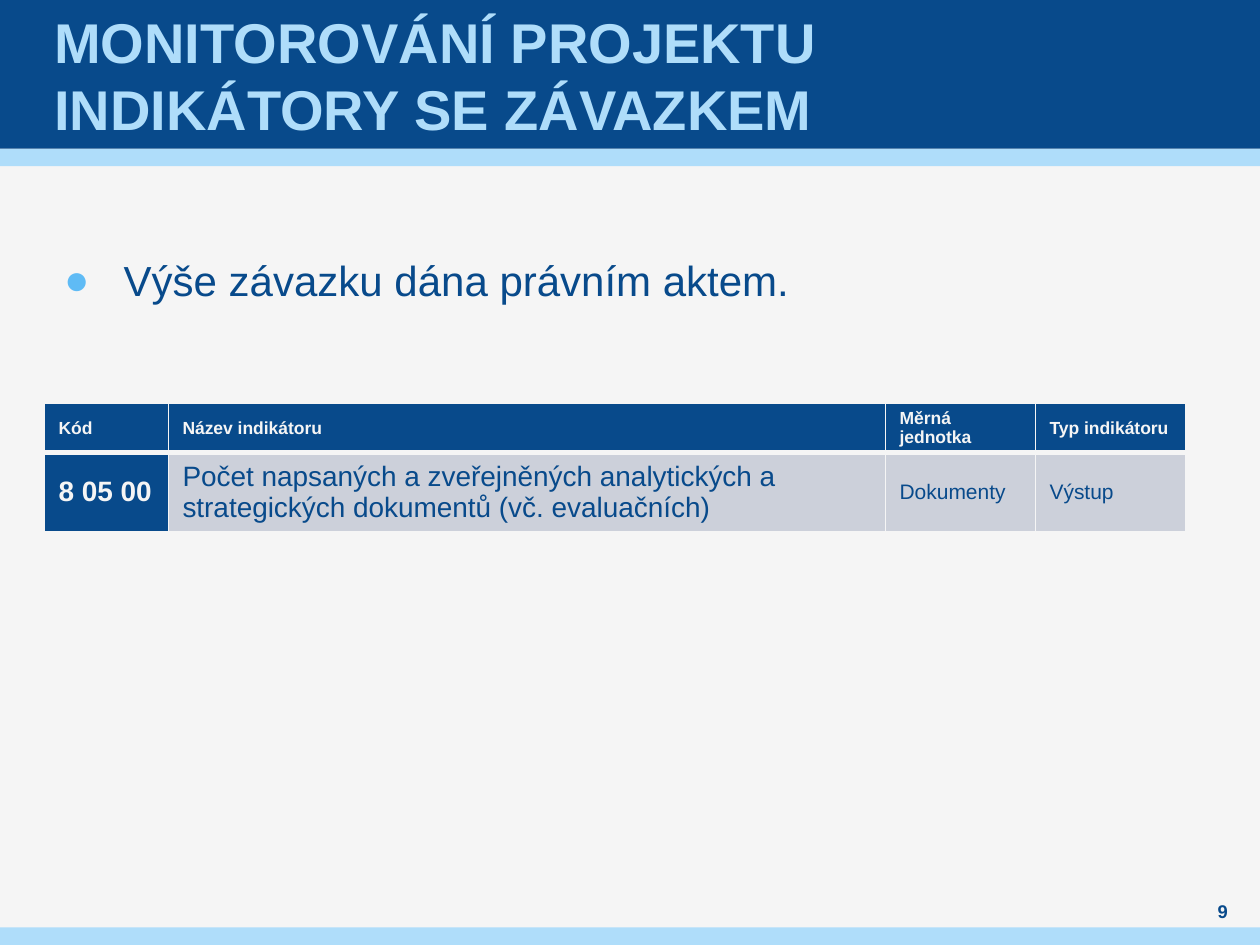
"""Builds the slide on project monitoring and its committed indicators."""
from dataclasses import dataclass

from lxml.etree import SubElement
from pptx import Presentation
from pptx.dml.color import RGBColor as Rgb
from pptx.enum.shapes import MSO_SHAPE as Preset
from pptx.enum.text import MSO_ANCHOR as Anchor, PP_ALIGN as Align
from pptx.oxml.ns import qn
from pptx.util import Pt


@dataclass(frozen=True)
class Theme:
    font: str = "Arial"
    navy: str = "084A8B"
    sky: str = "AFDDFA"
    bullet: str = "5FBBF5"
    paper: str = "F5F5F5"
    cell: str = "CCD0DA"
    title_size: float = 32
    body_size: float = 24
    name_size: float = 16
    detail_size: float = 12
    header_size: float = 10
    number_size: float = 10.5
    leading: float = 1.2


THEME = Theme()
WIDTH, HEIGHT = 720, 540
BANNER_HEIGHT, STRIPE_HEIGHT = 85, 10
COLUMN_WIDTHS = 70.8, 409.8, 85.7, 85.7
ROW_HEIGHTS = 28, 45.2
THIN, THICK = 1, 3
HEADINGS = "Kód", "Název indikátoru", "Měrná jednotka", "Typ indikátoru"
INDICATOR = (
    "8 05 00",
    "Počet napsaných a zveřejněných analytických a strategických dokumentů (vč. evaluačních)",
    "Dokumenty",
    "Výstup",
)
INDICATOR_SIZES = THEME.name_size, THEME.name_size, THEME.detail_size, THEME.detail_size


def add_run(paragraph, words, size, color, bold=False):
    run = paragraph.add_run()
    run.text = words
    run.font.name = THEME.font
    run.font.size = Pt(size)
    run.font.bold = bold
    run.font.color.rgb = Rgb.from_string(color)


def add_band(slide, top, height, color):
    band = slide.shapes.add_shape(Preset.RECTANGLE, 0, Pt(top), Pt(WIDTH), Pt(height))
    band.shadow.inherit = False
    band.fill.solid()
    band.fill.fore_color.rgb = Rgb.from_string(color)
    band.line.fill.background()


def add_text_area(slide, left, top, width, height, anchor=Anchor.MIDDLE, side_inset=0):
    area = slide.shapes.add_textbox(Pt(left), Pt(top), Pt(width), Pt(height))
    frame = area.text_frame
    frame.word_wrap = True
    frame.vertical_anchor = anchor
    frame.margin_left = frame.margin_right = Pt(side_inset)
    frame.margin_top = frame.margin_bottom = 0
    return frame.paragraphs[0]


def add_title(slide, *lines):
    title = add_text_area(slide, 28, 0, 663, BANNER_HEIGHT, side_inset=3)
    title.line_spacing = Pt(THEME.title_size * THEME.leading)
    for position, line in enumerate(lines):
        if position:
            title.add_line_break()
        add_run(title, line, THEME.title_size, THEME.sky, bold=True)


def add_bullet_point(slide, words):
    point = add_text_area(slide, 36.7, 145.4, 635, 115, Anchor.TOP)
    point.line_spacing = Pt(THEME.body_size * THEME.leading)
    point.space_before = point.space_after = Pt(6)
    properties = point._p.get_or_add_pPr()
    properties.set("marL", str(Pt(34)))
    properties.set("indent", str(Pt(-34)))
    bullet_color = SubElement(properties, qn("a:buClr"))
    SubElement(bullet_color, qn("a:srgbClr"), val=THEME.bullet)
    SubElement(properties, qn("a:buFont"), typeface=THEME.font)
    SubElement(properties, qn("a:buChar"), char="●")
    add_run(point, words, THEME.body_size, THEME.navy)


def add_borders(cell, top, bottom):
    properties = cell._tc.get_or_add_tcPr()
    for side, width in (("L", THIN), ("R", THIN), ("T", top), ("B", bottom)):
        border = SubElement(properties, qn(f"a:ln{side}"), w=str(Pt(width)))
        SubElement(SubElement(border, qn("a:solidFill")), qn("a:srgbClr"), val=THEME.paper)


def fill_cell(cell, words, size, emphasised, top, bottom):
    add_borders(cell, top, bottom)
    cell.fill.solid()
    cell.fill.fore_color.rgb = Rgb.from_string(THEME.navy if emphasised else THEME.cell)
    cell.vertical_anchor = Anchor.MIDDLE
    cell.margin_left = cell.margin_right = Pt(5)
    cell.margin_top = cell.margin_bottom = 0
    entry = cell.text_frame.paragraphs[0]
    entry.space_before = entry.space_after = Pt(3)
    entry._p.get_or_add_pPr().set("marL", str(Pt(3)))
    add_run(entry, words, size, THEME.paper if emphasised else THEME.navy, emphasised)


def add_indicator_table(slide):
    table = slide.shapes.add_table(
        len(ROW_HEIGHTS), len(COLUMN_WIDTHS), Pt(25.5), Pt(230.6),
        Pt(sum(COLUMN_WIDTHS)), Pt(sum(ROW_HEIGHTS)),
    ).table
    for column, width in zip(table.columns, COLUMN_WIDTHS):
        column.width = Pt(width)
    for row, height in zip(table.rows, ROW_HEIGHTS):
        row.height = Pt(height)
    for index, heading in enumerate(HEADINGS):
        fill_cell(table.cell(0, index), heading, THEME.header_size, True, THIN, THICK)
    for index, (value, size) in enumerate(zip(INDICATOR, INDICATOR_SIZES)):
        fill_cell(table.cell(1, index), value, size, index == 0, THICK, THIN)


def add_page_number(slide, number):
    page = add_text_area(slide, 680.4, 513.4, 36.7, 14.4)
    page.alignment = Align.CENTER
    add_run(page, number, THEME.number_size, THEME.navy, bold=True)


def main():
    deck = Presentation()
    deck.slide_width, deck.slide_height = Pt(WIDTH), Pt(HEIGHT)
    slide = deck.slides.add_slide(deck.slide_layouts[6])
    slide.background.fill.solid()
    slide.background.fill.fore_color.rgb = Rgb.from_string(THEME.paper)
    add_band(slide, BANNER_HEIGHT, STRIPE_HEIGHT, THEME.sky)
    add_band(slide, 0, BANNER_HEIGHT, THEME.navy)
    add_band(slide, HEIGHT - STRIPE_HEIGHT, STRIPE_HEIGHT, THEME.sky)
    add_title(slide, "MONITOROVÁNÍ PROJEKTU", "INDIKÁTORY SE ZÁVAZKEM")
    add_page_number(slide, "9")
    add_indicator_table(slide)
    add_bullet_point(slide, "Výše závazku dána právním aktem.")
    deck.save("out.pptx")


if __name__ == "__main__":
    main()
